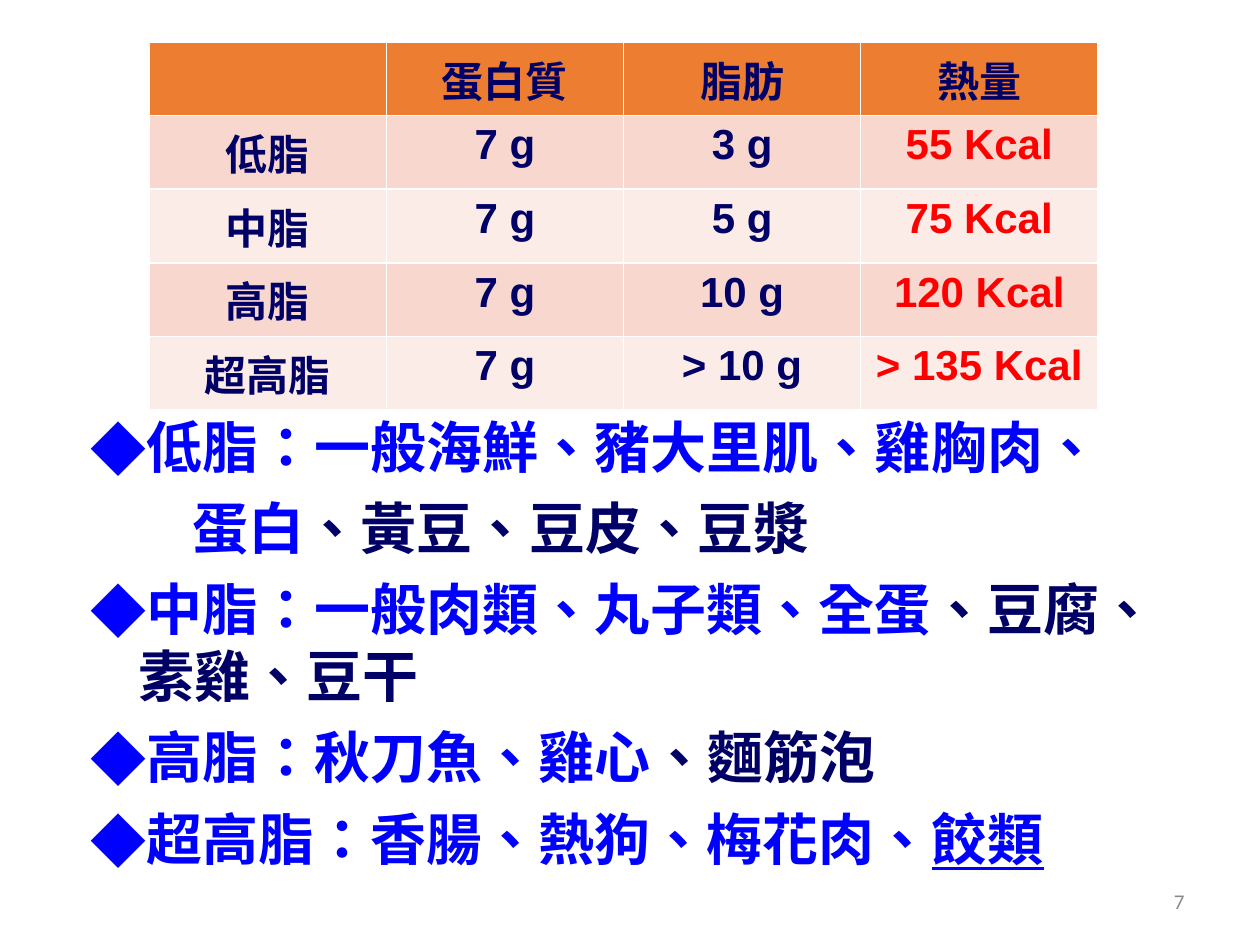
from lxml import etree
from pptx import Presentation
from pptx.dml.color import RGBColor
from pptx.enum.lang import MSO_LANGUAGE_ID
from pptx.enum.text import MSO_ANCHOR, MSO_AUTO_SIZE, PP_ALIGN
from pptx.oxml.ns import qn
from pptx.util import Inches, Pt

CENTER, RIGHT = PP_ALIGN.CENTER, PP_ALIGN.RIGHT
TOP, MIDDLE = MSO_ANCHOR.TOP, MSO_ANCHOR.MIDDLE
NO_FIT = MSO_AUTO_SIZE.NONE
CHINESE = MSO_LANGUAGE_ID.from_xml("zh-TW")
CJK = "Noto Sans CJK SC"
COLORS = {"navy": "000066", "blue": "0000FF", "red": "FF0000", "gray": "898989",
          "header": "ED7D31", "odd": "F8D7CE", "even": "FCECE8", "border": "FFFFFF"}


def add_run(p, text, size=24, font="Arial", color="navy", bold=True, underline=None):
    r = p.add_run()
    r.text = text
    r.font.size = Pt(size)
    r.font.name = font
    r.font.bold = bold
    r.font.underline = underline
    r.font.language_id = CHINESE
    r.font.color.rgb = RGBColor.from_string(COLORS[color])
    latin = r.font._element.find(qn("a:latin"))
    ea = etree.Element(qn("a:ea"), typeface=CJK)
    latin.addnext(ea)


prs = Presentation()
prs.slide_width, prs.slide_height = Inches(10), Inches(7.5)
COL, ROW = prs.slide_width / 100, prs.slide_height / 75
s = prs.slides.add_slide(prs.slide_layouts[1])
title = s.shapes.title
title._element.getparent().remove(title._element)

body = s.placeholders[1]
body.left, body.top = int(6.2 * COL), int(32.2 * ROW)
body.width, body.height = int(89.8 * COL), int(33.4 * ROW)
tf = body.text_frame
tf.word_wrap = True
tf.auto_size = NO_FIT
tf.vertical_anchor = TOP

FOODS = [
    ("◆", [("低脂：一般海鮮、豬大里肌、雞胸肉、", "blue", None)]),
    (None, [("蛋白", "blue", None), ("、黃豆、豆皮、豆漿", "navy", None)]),
    ("◆", [("中脂：一般肉類、丸子類、全蛋", "blue", None), ("、豆腐、素雞、豆干", "navy", None)]),
    ("◆", [("高脂：秋刀魚、雞心", "blue", None), ("、麵筋泡", "navy", None)]),
    ("◆", [("超高脂：香腸、熱狗、梅花肉、", "blue", None), ("餃類", "blue", True)]),
]
for i, (bullet, runs) in enumerate(FOODS):
    p = tf.add_paragraph() if i else tf.paragraphs[0]
    p.space_before = Pt(8 if i else 0)
    p.line_spacing = 1.0
    pPr = p._p.get_or_add_pPr()
    pPr.set("marL", str(int((3.8 if bullet else 8.1) * COL)))
    pPr.set("indent", str(int(-3.8 * COL) if bullet else 0))
    if bullet:
        etree.SubElement(pPr, qn("a:buFont"), typeface=CJK)
        etree.SubElement(pPr, qn("a:buChar"), char=bullet)
    else:
        etree.SubElement(pPr, qn("a:buNone"))
    for text, color, underline in runs:
        add_run(p, text, size=32, font=CJK, color=color, underline=underline)

CELLS = [
    ["", "蛋白質", "脂肪", "熱量"],
    ["低脂", "7 g", "3 g", "55 Kcal"],
    ["中脂", "7 g", "5 g", "75 Kcal"],
    ["高脂", "7 g", "10 g", "120 Kcal"],
    ["超高脂", "7 g", "> 10 g", "> 135 Kcal"],
]
table = s.shapes.add_table(len(CELLS), len(CELLS[0]), int(11.84 * COL), int(3.34 * ROW),
                           int(75.3 * COL), int(25 * ROW)).table
for i, row in enumerate(CELLS):
    fill = "header" if i == 0 else "odd" if i % 2 else "even"
    for j, text in enumerate(row):
        cell = table.cell(i, j)
        p = cell.text_frame.paragraphs[0]
        p.alignment = CENTER
        if text:
            add_run(p, text, color="red" if i and j == 3 else "navy")
        tcPr = cell._tc.get_or_add_tcPr()
        for side in ("lnL", "lnR", "lnT", "lnB"):
            ln = etree.SubElement(tcPr, qn(f"a:{side}"), w=str(Pt(1)))
            line_fill = etree.SubElement(ln, qn("a:solidFill"))
            etree.SubElement(line_fill, qn("a:srgbClr"), val=COLORS["border"])
        cell.fill.solid()
        cell.fill.fore_color.rgb = RGBColor.from_string(COLORS[fill])

number = s.shapes.add_textbox(int(71.7 * COL), int(69.5 * ROW), int(23.3 * COL), int(4 * ROW))
tf = number.text_frame
tf.word_wrap = True
tf.vertical_anchor = MIDDLE
tf.paragraphs[0].alignment = RIGHT
add_run(tf.paragraphs[0], "7", size=12, font="Calibri", color="gray", bold=False)

prs.save("out.pptx")
